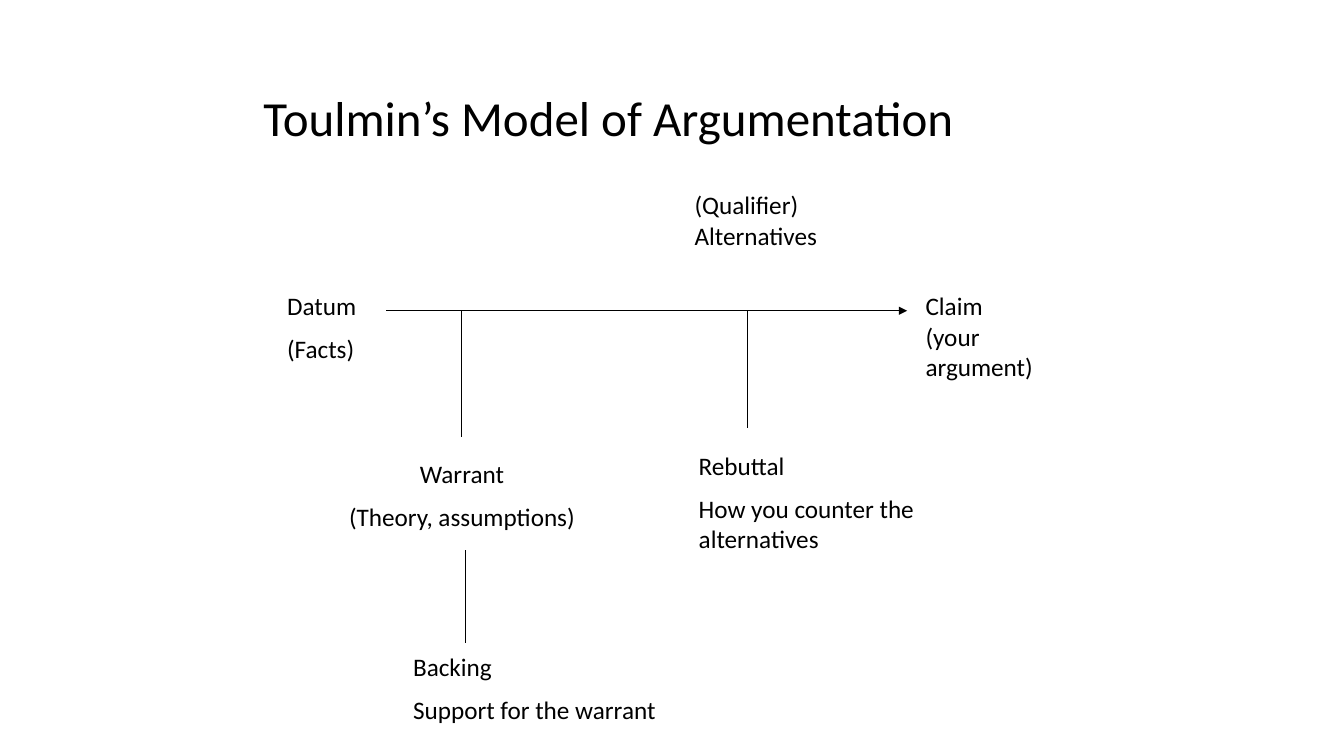
from lxml.etree import SubElement
from pptx import Presentation
from pptx.dml.color import RGBColor
from pptx.enum.shapes import MSO_CONNECTOR
from pptx.enum.text import MSO_ANCHOR, PP_ALIGN
from pptx.oxml.ns import qn
from pptx.util import Pt

BLACK = RGBColor(0, 0, 0)
FONT = "Calibri"
AXIS = 222


def add_text(slide, lines, left, top, width, height, size=18, gap=9,
             align=PP_ALIGN.LEFT, anchor=MSO_ANCHOR.TOP, pitch=None):
    box = slide.shapes.add_textbox(Pt(left), Pt(top), Pt(width), Pt(height))
    frame = box.text_frame
    frame.word_wrap = True
    frame.vertical_anchor = anchor
    for i, line in enumerate(lines):
        para = frame.paragraphs[0] if i == 0 else frame.add_paragraph()
        para.alignment = align
        para.space_before = Pt(gap if i else 0)
        if pitch:
            para.line_spacing = pitch
        run = para.add_run()
        run.text = line
        run.font.name = FONT
        run.font.size = Pt(size)
        run.font.color.rgb = BLACK


def add_line(slide, x1, y1, x2, y2, arrow=False):
    line = slide.shapes.add_connector(
        MSO_CONNECTOR.STRAIGHT, Pt(x1), Pt(y1), Pt(x2), Pt(y2))
    line.line.color.rgb = BLACK
    line.line.width = Pt(0.75)
    if arrow:
        SubElement(line.line._get_or_add_ln(), qn("a:tailEnd"), type="triangle")
    SubElement(line._element.spPr, qn("a:effectLst"))


def main():
    deck = Presentation()
    deck.slide_width, deck.slide_height = Pt(960), Pt(540)
    slide = deck.slides.add_slide(deck.slide_layouts[6])

    add_text(slide, ["Toulmin’s Model of Argumentation"], 181, 41, 576, 90.5,
             size=35, anchor=MSO_ANCHOR.MIDDLE, pitch=0.9)

    add_line(slide, 276, AXIS, 624, AXIS)
    add_line(slide, 606, AXIS, 648, AXIS, arrow=True)
    add_line(slide, 330, AXIS, 330, 312)
    add_line(slide, 534, AXIS, 534, 306)
    add_line(slide, 332.5, 393, 332.5, 459)

    add_text(slide, ["Datum", "(Facts)"], 198, 204, 72, 62)
    add_text(slide, ["(Qualifier) Alternatives"], 489, 132, 135, 51)
    add_text(slide, ["Claim", "(your argument)"], 654, 204, 109.5, 73, gap=0)
    add_text(slide, ["Warrant", "(Theory, assumptions)"], 210, 324, 240, 62,
             align=PP_ALIGN.CENTER)
    add_text(slide, ["Backing", "Support for the warrant"], 288, 462, 255, 62)
    add_text(slide, ["Rebuttal", "How you counter the alternatives"],
             492, 318, 174, 83.5)

    deck.save("out.pptx")


if __name__ == "__main__":
    main()
